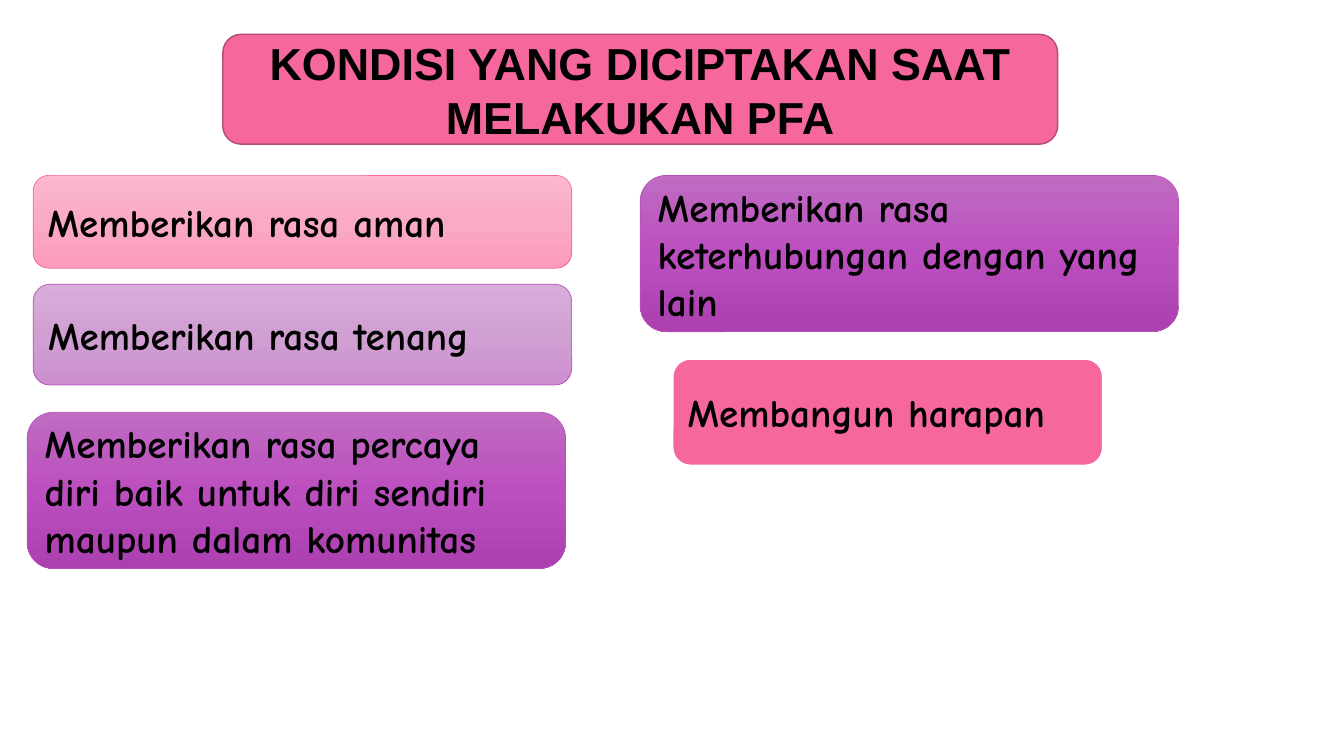
import copy
import pptx
import pptx.dml.color
import pptx.enum.shapes
import pptx.enum.text
import pptx.oxml.ns
import pptx.util

RGBColor = pptx.dml.color.RGBColor
Inches = pptx.util.Inches
Pt = pptx.util.Pt
ALIGN = pptx.enum.text.PP_ALIGN

BLACK = RGBColor(0x00, 0x00, 0x00)
WHITE = RGBColor(0xFF, 0xFF, 0xFF)
PINK = RGBColor(0xF5, 0x67, 0x9D)
DARK_PINK = RGBColor(0xB5, 0x4C, 0x74)
PURPLE = RGBColor(0xB7, 0x54, 0xBA)
SOFT_PINK = [RGBColor(0xFC, 0xB9, 0xCF), RGBColor(0xFA, 0xAA, 0xC4), RGBColor(0xFC, 0x9B, 0xBB)]
SOFT_PURPLE = [RGBColor(0xD8, 0xAD, 0xDA), RGBColor(0xD1, 0xA0, 0xD3), RGBColor(0xCD, 0x8F, 0xD0)]
DEEP_PURPLE = [RGBColor(0xBF, 0x6C, 0xC2), RGBColor(0xBC, 0x4F, 0xBF), RGBColor(0xAC, 0x40, 0xB0)]

deck = pptx.Presentation()
deck.slide_width = Inches(13.33)
deck.slide_height = Inches(7.5)
page = deck.slides.add_slide(deck.slide_layouts[6])


def paint_gradient(fill, box, colors):
    fill.gradient()
    fill.gradient_angle = 270
    stop_list = box._element.spPr.find(".//" + pptx.oxml.ns.qn("a:gsLst"))
    stop_list.insert(1, copy.deepcopy(stop_list[0]))
    for index, (stop, color) in enumerate(zip(fill.gradient_stops, colors)):
        stop.position = index / (len(colors) - 1)
        stop.color.rgb = color


def add_card(text, place, colors, edge, edge_width, font="Comic Neue", size=28,
             align=ALIGN.LEFT, space_before=3):
    box = page.shapes.add_shape(
        pptx.enum.shapes.MSO_SHAPE.ROUNDED_RECTANGLE, *[Inches(length) for length in place])
    box.shadow.inherit = False
    if len(colors) > 1:
        paint_gradient(box.fill, box, colors)
    else:
        box.fill.solid()
        box.fill.fore_color.rgb = colors[0]
    box.line.color.rgb = edge
    box.line.width = Pt(edge_width)
    box.text_frame.word_wrap = True
    box.text_frame.vertical_anchor = pptx.enum.text.MSO_ANCHOR.MIDDLE
    para = box.text_frame.paragraphs[0]
    para.alignment = align
    para.space_before = Pt(space_before)
    span = para.add_run()
    span.text = text
    span.font.name = font
    span.font.size = Pt(size)
    span.font.bold = True
    span.font.color.rgb = BLACK


LEFT, RIGHT, TOP = 0.33, 6.35, 1.74
WIDE, TALL = 5.34, 1.55

add_card("KONDISI YANG DICIPTAKAN SAAT MELAKUKAN PFA", (2.21, 0.34, 8.28, 1.09),
         [PINK], DARK_PINK, 1, "Arial", 32, ALIGN.CENTER, 0)

conditions = [
    ("Memberikan rasa aman", (LEFT, TOP, WIDE, 0.92), SOFT_PINK, PINK, 0.5),
    ("Memberikan rasa tenang", (LEFT, 2.82, WIDE, 1), SOFT_PURPLE, PURPLE, 0.5),
    ("Memberikan rasa percaya diri baik untuk diri sendiri maupun dalam komunitas",
     (0.27, 4.09, WIDE, TALL), DEEP_PURPLE, PURPLE, 0.5),
    ("Memberikan rasa keterhubungan dengan yang lain",
     (RIGHT, TOP, WIDE, TALL), DEEP_PURPLE, PURPLE, 0.5),
    ("Membangun harapan", (6.67, 3.56, 4.27, 1.06), [PINK], WHITE, 1.5),
]
for condition in conditions:
    add_card(*condition)

deck.save("out.pptx")
